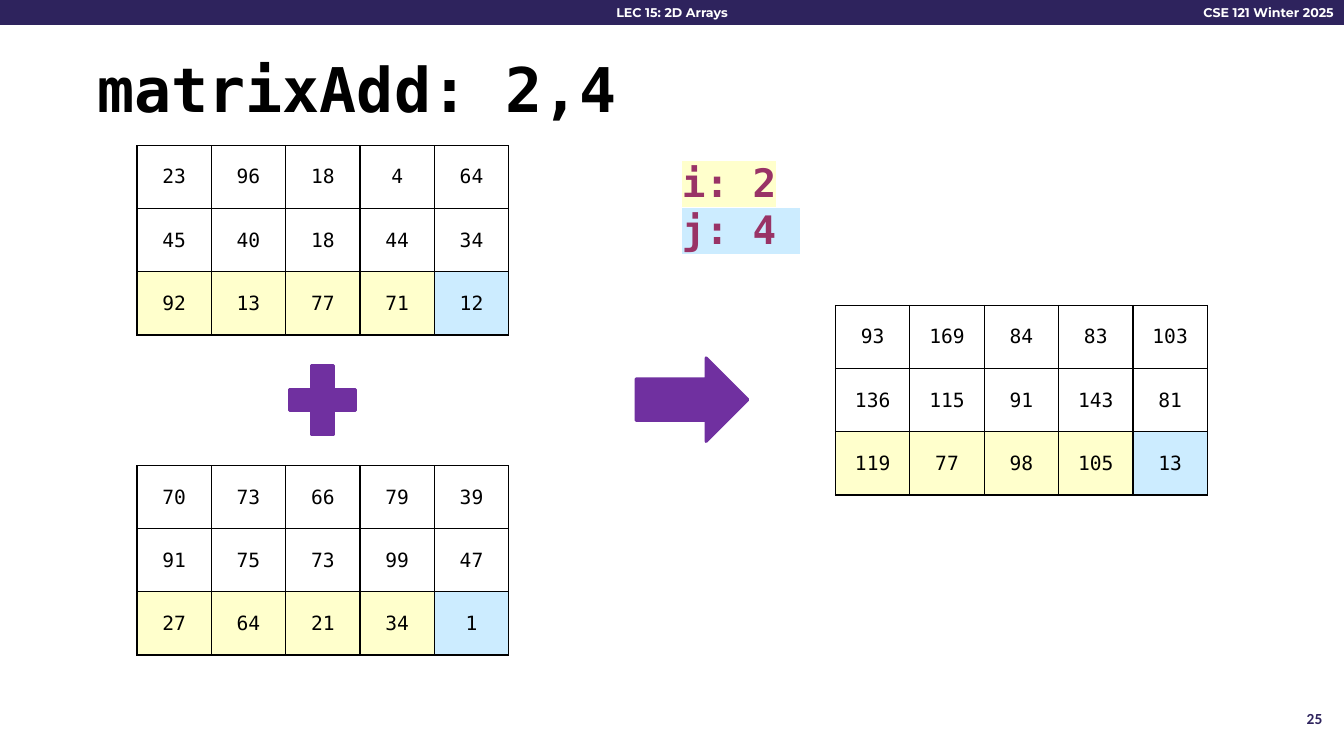
import pptx
import pptx.dml.color
import pptx.enum.shapes
import pptx.enum.text
import pptx.oxml
import pptx.oxml.ns
import pptx.util

Pt = pptx.util.Pt
RGBColor = pptx.dml.color.RGBColor
MSO_SHAPE = pptx.enum.shapes.MSO_SHAPE
PP_ALIGN = pptx.enum.text.PP_ALIGN
MSO_ANCHOR = pptx.enum.text.MSO_ANCHOR
NAMESPACE = pptx.oxml.ns.nsdecls("a")

COLORS = {
    "navy": "2E235D",
    "white": "FFFFFF",
    "black": "000000",
    "purple": "7030A0",
    "plum": "993366",
    "row": "FFFFCC",
    "column": "CCECFF",
}
MONO = "DejaVu Sans Mono"


def style_paragraph(paragraph, size, font_name, color, bold, alignment):
    paragraph.alignment = alignment
    for run in paragraph.runs:
        run.font.size = Pt(size)
        run.font.name = font_name
        run.font.bold = bold
        run.font.color.rgb = RGBColor.from_string(COLORS[color])


def add_text(slide, box, text, size, font_name, color, alignment, anchor, inset=3.6):
    shape = slide.shapes.add_textbox(*[Pt(value) for value in box])
    text_frame = shape.text_frame
    text_frame.word_wrap = True
    text_frame.vertical_anchor = anchor
    text_frame.margin_left = text_frame.margin_right = Pt(inset)
    text_frame.margin_top = text_frame.margin_bottom = Pt(3.6)
    text_frame.text = text
    for paragraph in text_frame.paragraphs:
        style_paragraph(paragraph, size, font_name, color, True, alignment)
    return text_frame


presentation = pptx.Presentation()
presentation.slide_width = Pt(960)
presentation.slide_height = Pt(540)
slide = presentation.slides.add_slide(presentation.slide_layouts[6])

shapes = [
    (MSO_SHAPE.RECTANGLE, (0, 0, 960, 17.3), "navy", 1, 0),
    (MSO_SHAPE.MATH_PLUS, (198, 252, 64.8, 67.7), "purple", 2, 0),
    (MSO_SHAPE.DOWN_ARROW, (464.4, 245.5, 59.8, 79.9), "purple", 2, 270),
]
for kind, box, color, line_width, rotation in shapes:
    shape = slide.shapes.add_shape(kind, *[Pt(value) for value in box])
    shape.shadow.inherit = False
    shape.rotation = rotation
    shape.fill.solid()
    shape.fill.fore_color.rgb = RGBColor.from_string(COLORS[color])
    shape.line.color.rgb = RGBColor.from_string(COLORS[color])
    shape.line.width = Pt(line_width)

add_text(slide, (836, 0, 120.2, 18), "CSE 121 Winter 2025", 9, "Montserrat",
         "white", PP_ALIGN.RIGHT, MSO_ANCHOR.TOP)
add_text(slide, (240, 0, 480, 18), "LEC 15: 2D Arrays", 9, "Montserrat",
         "white", PP_ALIGN.CENTER, MSO_ANCHOR.TOP)
title = add_text(slide, (66, 36, 828, 60), "matrixAdd: 2,4", 44, MONO,
                 "black", PP_ALIGN.LEFT, MSO_ANCHOR.MIDDLE)
title.paragraphs[0].line_spacing = 0.9
add_text(slide, (928.8, 502.8, 19.4, 20), "25", 11, "Calibri",
         "navy", PP_ALIGN.RIGHT, MSO_ANCHOR.MIDDLE)

indices = add_text(slide, (480, 109.5, 141, 75), "i: 2\nj: 4 ", 28, MONO,
                   "plum", PP_ALIGN.LEFT, MSO_ANCHOR.TOP, inset=7.2)
for paragraph, color in zip(indices.paragraphs, ("row", "column")):
    fill = paragraph.runs[0].font.fill._xPr.find(pptx.oxml.ns.qn("a:solidFill"))
    fill.addnext(pptx.oxml.parse_xml(
        f'<a:highlight {NAMESPACE}><a:srgbClr val="{COLORS[color]}"/></a:highlight>'))

matrices = [
    (97.8, 104, [[23, 96, 18, 4, 64], [45, 40, 18, 44, 34], [92, 13, 77, 71, 12]]),
    (97.8, 332.6, [[70, 73, 66, 79, 39], [91, 75, 73, 99, 47], [27, 64, 21, 34, 1]]),
    (596.8, 218.2, [[93, 169, 84, 83, 103], [136, 115, 91, 143, 81],
                    [119, 77, 98, 105, 13]]),
]
current_row, current_column = 2, 4
cell_width, cell_height = 53.14, 45.1

for left, top, matrix in matrices:
    row_count, column_count = len(matrix), len(matrix[0])
    table = slide.shapes.add_table(
        row_count, column_count, Pt(left), Pt(top),
        Pt(cell_width * column_count), Pt(cell_height * row_count)).table
    table.first_row = table.horz_banding = False
    for column in table.columns:
        column.width = Pt(cell_width)
    for row in table.rows:
        row.height = Pt(cell_height)
    for i, values in enumerate(matrix):
        for j, value in enumerate(values):
            cell = table.cell(i, j)
            cell.text_frame.text = str(value)
            cell.vertical_anchor = MSO_ANCHOR.MIDDLE
            style_paragraph(cell.text_frame.paragraphs[0], 14, MONO, "black",
                            False, PP_ALIGN.CENTER)
            if i == current_row:
                color = "column" if j == current_column else "row"
                cell.fill.solid()
                cell.fill.fore_color.rgb = RGBColor.from_string(COLORS[color])
            else:
                cell.fill.background()
            properties = cell._tc.get_or_add_tcPr()
            for position, side in enumerate("LRTB"):
                properties.insert(position, pptx.oxml.parse_xml(
                    f'<a:ln{side} {NAMESPACE} w="{Pt(1)}"><a:solidFill>'
                    f'<a:srgbClr val="{COLORS["black"]}"/></a:solidFill></a:ln{side}>'))

presentation.save("out.pptx")
